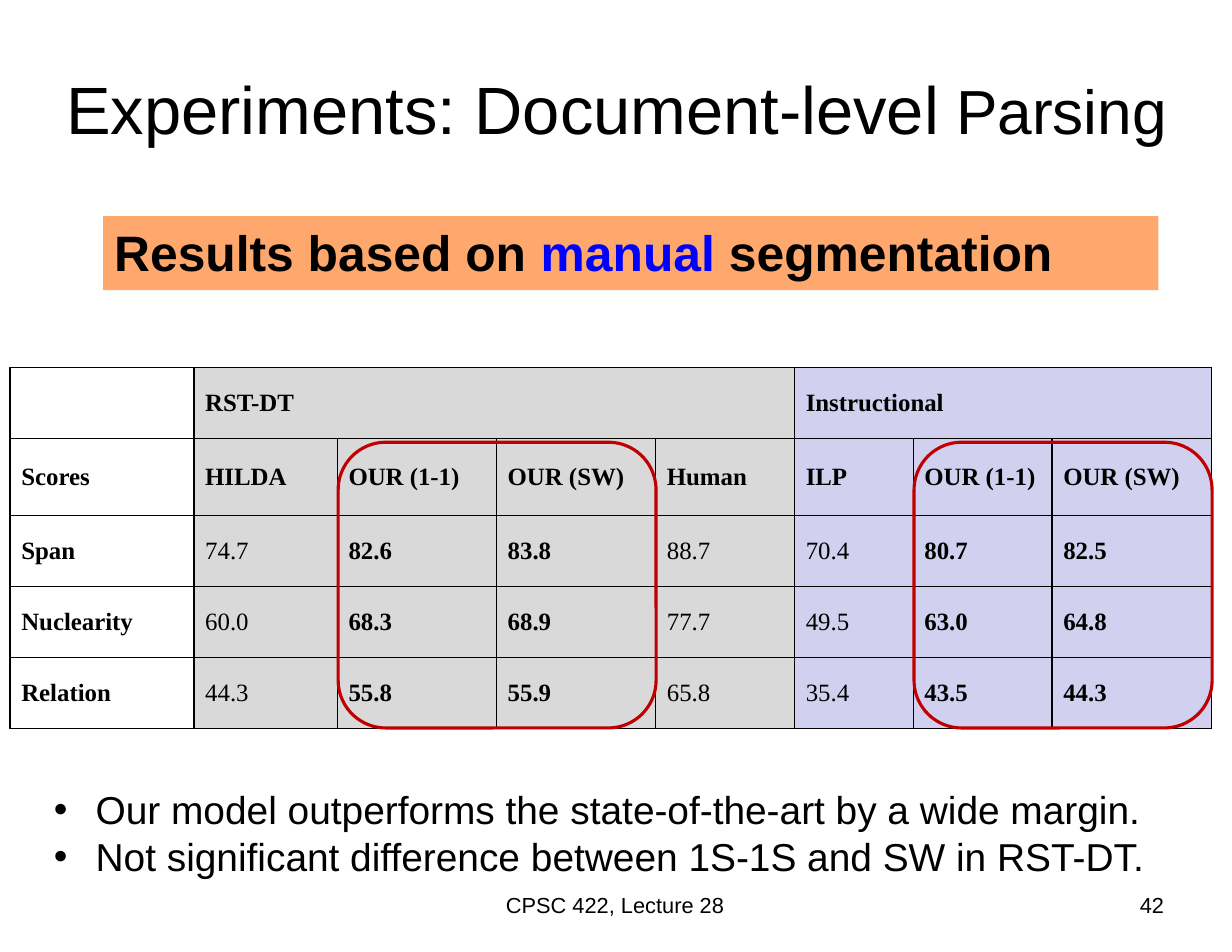
from pptx import Presentation
from pptx.dml.color import RGBColor
from pptx.enum.shapes import MSO_SHAPE as Shape
from pptx.enum.text import MSO_ANCHOR as Anchor, MSO_AUTO_SIZE as AutoSize, PP_ALIGN as Align
from pptx.oxml import parse_xml
from pptx.oxml.ns import nsdecls, qn
from pptx.util import Cm, Pt

BLACK = RGBColor(0x00, 0x00, 0x00)
BLUE = RGBColor(0x00, 0x00, 0xFF)
RED = RGBColor(0xC0, 0x00, 0x00)
ORANGE = RGBColor(0xFF, 0x66, 0x00)
GREY = RGBColor(0xD9, 0xD9, 0xD9)
LAVENDER = RGBColor(0xA3, 0xA3, 0xE0)

COLUMNS = [4.17, 3.25, 3.61, 3.61, 3.15, 2.69, 3.15, 3.61]
ROWS = [1.61, 1.75, 1.61, 1.61, 1.61]
GROUPS = [("RST-DT", 1, 4, GREY, 100), ("Instructional", 5, 7, LAVENDER, 49)]
SCORES = [
    ["Scores", "HILDA", "OUR (1-1)", "OUR (SW)", "Human", "ILP", "OUR (1-1)", "OUR (SW)"],
    ["Span", "74.7", "82.6", "83.8", "88.7", "70.4", "80.7", "82.5"],
    ["Nuclearity", "60.0", "68.3", "68.9", "77.7", "49.5", "63.0", "64.8"],
    ["Relation", "44.3", "55.8", "55.9", "65.8", "35.4", "43.5", "44.3"],
]


def add_span(para, text, size=14, font="Arial", color=BLACK, bold=False):
    """Append formatted text to a paragraph."""
    span = para.add_run()
    span.text = text
    span.font.size = Pt(size)
    span.font.name = font
    span.font.color.rgb = color
    span.font.bold = bold


def paint(fill, color, opacity=100):
    """Fill with a solid colour at the given opacity in percent."""
    fill.solid()
    fill.fore_color.rgb = color
    if opacity < 100:
        alpha = parse_xml(f'<a:alpha {nsdecls("a")} val="{opacity * 1000}"/>')
        fill._xPr.find(qn("a:solidFill"))[0].append(alpha)


def set_borders(cell):
    """Draw a thin black line on every side of a cell."""
    properties = cell._tc.get_or_add_tcPr()
    for side in ("lnL", "lnR", "lnT", "lnB"):
        properties.append(parse_xml(
            f'<a:{side} {nsdecls("a")} w="12700"><a:solidFill>'
            f'<a:srgbClr val="{BLACK}"/></a:solidFill></a:{side}>'))


class SlideBuilder:
    """Hold the style and the current slide, and add elements to it."""

    def __init__(self, page, table_font="Times New Roman", table_size=16):
        self.page = page
        self.table_font = table_font
        self.table_size = table_size

    def title(self, spans, area):
        """Place and format the title placeholder."""
        box = self.page.shapes.title
        box.left, box.top, box.width, box.height = map(Cm, area)
        frame = box.text_frame
        frame.auto_size = AutoSize.NONE
        frame.vertical_anchor = Anchor.MIDDLE
        para = frame.paragraphs[0]
        para.alignment = Align.CENTER
        for text, size in spans:
            add_span(para, text, size=size)

    def text(self, lines, area, size=14, align=Align.LEFT, bullet=False):
        """Add a text box with one paragraph per line."""
        frame = self.page.shapes.add_textbox(*map(Cm, area)).text_frame
        frame.word_wrap = True
        for index, line in enumerate(lines):
            para = frame.add_paragraph() if index else frame.paragraphs[0]
            para.alignment = align
            add_span(para, line, size=size)
            if bullet:
                properties = para._p.get_or_add_pPr()
                properties.set("marL", str(Cm(0.95)))
                properties.set("indent", str(-Cm(0.95)))
                properties.append(parse_xml(f'<a:buFont {nsdecls("a")} typeface="Arial"/>'))
                properties.append(parse_xml(f'<a:buChar {nsdecls("a")} char="•"/>'))

    def banner(self, spans, area):
        """Add a translucent orange bar with bold text."""
        box = self.page.shapes.add_shape(Shape.RECTANGLE, *map(Cm, area))
        box.shadow.inherit = False
        paint(box.fill, ORANGE, opacity=57)
        box.line.fill.background()
        box.text_frame.word_wrap = True
        box.text_frame.vertical_anchor = Anchor.TOP
        para = box.text_frame.paragraphs[0]
        para.alignment = Align.LEFT
        for text, color in spans:
            add_span(para, text, size=32, color=color, bold=True)

    def ring(self, area):
        """Add a red rounded outline."""
        box = self.page.shapes.add_shape(Shape.ROUNDED_RECTANGLE, *map(Cm, area))
        box.shadow.inherit = False
        box.fill.background()
        box.line.color.rgb = RED
        box.line.width = Pt(2)

    def score_table(self, left, top):
        """Add the table of scores with a merged heading per corpus."""
        area = map(Cm, (left, top, sum(COLUMNS), sum(ROWS)))
        table = self.page.shapes.add_table(len(ROWS), len(COLUMNS), *area).table
        table.first_row = table.horz_banding = False
        for column, width in zip(table.columns, COLUMNS):
            column.width = Cm(width)
        for row, height in zip(table.rows, ROWS):
            row.height = Cm(height)
        for cell in table.iter_cells():
            set_borders(cell)
            cell.fill.background()
            cell.vertical_anchor = Anchor.MIDDLE
        for name, first, last, color, opacity in GROUPS:
            for row in range(len(ROWS)):
                for column in range(first, last + 1):
                    paint(table.cell(row, column).fill, color, opacity)
            table.cell(0, first).merge(table.cell(0, last))
            self.cell_text(table.cell(0, first), name, True)
        for row, values in enumerate(SCORES, start=1):
            for column, value in enumerate(values):
                bold = row == 1 or column == 0 or SCORES[0][column].startswith("OUR")
                self.cell_text(table.cell(row, column), value, bold)

    def cell_text(self, cell, text, bold):
        """Write text in a table cell."""
        add_span(cell.text_frame.paragraphs[0], text, size=self.table_size,
                 font=self.table_font, bold=bold)


def main():
    """Build the slide and save it."""
    deck = Presentation()
    deck.slide_width, deck.slide_height = Cm(27.94), Cm(21.59)
    slide = SlideBuilder(deck.slides.add_slide(deck.slide_layouts[5]))
    slide.title([("Experiments: Document-level", 43), (" Parsing", 40)],
                (0.71, 0.86, 26.54, 3.15))
    slide.text(["42"], (20.12, 20.09, 6.53, 1.5), align=Align.RIGHT)
    slide.text(["Our model outperforms the state-of-the-art by a wide margin.",
                "Not significant difference between 1S-1S and SW in RST-DT."],
               (0.97, 17.7, 26.77, 2.39), size=25, bullet=True)
    slide.score_table(0.23, 8.33)
    for left, width in ((7.67, 7.21), (20.73, 6.76)):
        slide.ring((left, 10.03, width, 6.48))
    slide.banner([("Results based on ", BLACK), ("manual", BLUE), (" segmentation", BLACK)],
                 (2.34, 4.9, 23.93, 1.68))
    slide.text(["CPSC 422, Lecture 28"], (9.53, 20.09, 8.84, 1.5), align=Align.CENTER)
    deck.save("out.pptx")


if __name__ == "__main__":
    main()
